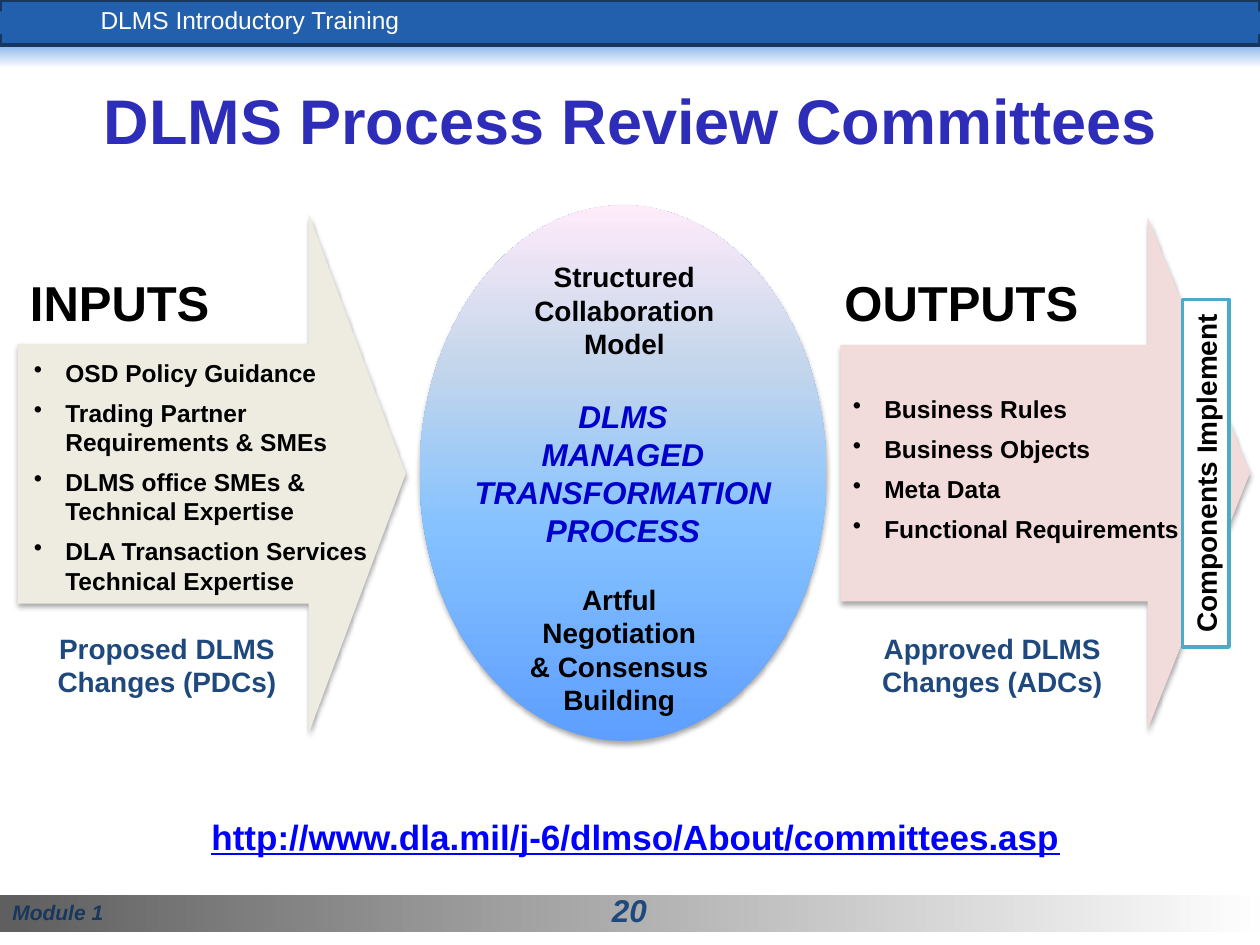
"""Build the slide on the DLMS process review committees."""
from dataclasses import dataclass

from lxml import etree
from pptx import Presentation
from pptx import util as u
from pptx.dml.color import RGBColor
from pptx.enum import shapes, text
from pptx.oxml import ns

COLUMNS, ROWS = 100, 75
WIDTH, HEIGHT = u.Inches(10), u.Inches(7.5)


@dataclass(frozen=True)
class Theme:
    """Colours, font and type sizes of the slide."""
    font: str = "Arial"
    black: str = "000000"
    white: str = "FFFFFF"
    navy: str = "17375E"
    band: str = "2260AE"
    glow: str = "8DB8EE"
    heading: str = "2D2DB9"
    label: str = "1F497D"
    process: str = "0000CC"
    link: str = "0000FF"
    sand: str = "EEECE1"
    rose: str = "F2DCDB"
    teal: str = "4BACC6"
    sky: tuple = ((0, "5E9EFF", 100), (40, "85C2FF", 100),
                  (70, "C4D6EB", 100), (100, "FFEBFA", 100))
    title: int = 36
    flow: int = 28
    url: int = 20
    strong: int = 18
    body: int = 16
    small: int = 14
    footer: int = 12


THEME = Theme()


def place(left, top, width, height):
    """Turn grid columns and rows into slide lengths."""
    across, down = WIDTH / COLUMNS, HEIGHT / ROWS
    return [round(n) for n in (left * across, top * down, width * across, height * down)]


def add(parent, tag, **attributes):
    """Append a drawing element with the given attributes."""
    return etree.SubElement(parent, ns.qn(tag), {k: str(v) for k, v in attributes.items()})


def add_color(parent, color, alpha):
    """Append a colour with an opacity in percent."""
    add(add(parent, "a:srgbClr", val=color), "a:alpha", val=alpha * 1000)


def add_shadow(effects, blur, distance, alpha):
    """Append a shadow that falls straight down."""
    shadow = add(effects, "a:outerShdw", blurRad=u.Pt(blur), dist=u.Pt(distance),
                 dir=90 * 60000, rotWithShape=0)
    add_color(shadow, THEME.black, alpha)


def fill_gradient(shape, stops, angle):
    """Fill a shape with (position, colour, opacity) stops."""
    gradient = etree.Element(ns.qn("a:gradFill"), rotWithShape="1")
    stop_list = add(gradient, "a:gsLst")
    for position, color, alpha in stops:
        add_color(add(stop_list, "a:gs", pos=position * 1000), color, alpha)
    add(gradient, "a:lin", ang=angle * 60000, scaled=0)
    shape._element.spPr.find(ns.qn("a:prstGeom")).addnext(gradient)


def add_figure(page, kind, area, fill=None, line=None, shadow=False):
    """Draw a preset shape, plain unless a line or shadow is asked for."""
    shape = page.shapes.add_shape(kind, *place(*area))
    shape.shadow.inherit = False
    if fill:
        shape.fill.solid()
        shape.fill.fore_color.rgb = RGBColor.from_string(fill)
    if line:
        shape.line.color.rgb = RGBColor.from_string(line)
        shape.line.width = u.Pt(2)
    else:
        shape.line.fill.background()
    if shadow:
        add_shadow(shape._element.spPr.find(ns.qn("a:effectLst")), 3.1, 1.8, 35)
    return shape


def write(shape, lines, size, color, align="CENTER", wrap=True, bold=True,
          italic=False, underline=False, spacing=None):
    """Fill a shape with one paragraph per line and format the runs."""
    frame = shape.text_frame
    frame.text = "\n".join(lines)
    frame.word_wrap = wrap
    for para in frame.paragraphs:
        para.alignment = getattr(text.PP_ALIGN, align)
        para.line_spacing = spacing
        for span in para.runs:
            font = span.font
            font.name, font.size = THEME.font, u.Pt(size)
            font.bold, font.italic, font.underline = bold, italic, underline
            font.color.rgb = RGBColor.from_string(color)
    return shape


def add_text(page, area, lines, size, color, **style):
    """Add a text box."""
    return write(page.shapes.add_textbox(*place(*area)), lines, size, color, **style)


def add_bullets(page, area, lines):
    """Add a bulleted list with a hanging indent."""
    box = add_text(page, area, lines, THEME.small, THEME.black, align="LEFT")
    for index, para in enumerate(box.text_frame.paragraphs):
        if index:
            para.space_before = u.Pt(6)
        properties = para._p.get_or_add_pPr()
        indent = u.Inches(0.25)
        properties.set("marL", str(indent))
        properties.set("indent", str(-indent))
        add(properties, "a:buChar", char="•")


def add_header(page):
    """Draw the top band with its glow and course name."""
    rectangle = shapes.MSO_SHAPE.RECTANGLE
    glow = add_figure(page, rectangle, (0, 3.6, COLUMNS, 1.8))
    fill_gradient(glow, ((0, THEME.glow, 100), (100, THEME.white, 100)), 90)
    add_figure(page, rectangle, (0, 0, COLUMNS, 3.6), THEME.band, THEME.navy)
    add_figure(page, rectangle, (0, 0.9, COLUMNS, 1.8), THEME.band)
    box = add_text(page, (7, 0.2, 46.3, 3.4), ["DLMS Introductory Training"], THEME.small,
                   THEME.white, align="LEFT", bold=False, spacing=0.9)
    fill = box.text_frame.paragraphs[0].runs[0]._r.rPr.find(ns.qn("a:solidFill"))
    effects = etree.Element(ns.qn("a:effectLst"))
    fill.addnext(effects)
    add_shadow(effects, 3, 2, 60)


def add_footer(page):
    """Draw the bottom band with module name and page number."""
    bar = add_figure(page, shapes.MSO_SHAPE.RECTANGLE, (0, 71.1, COLUMNS, 2.8))
    fill_gradient(bar, ((0, THEME.black, 63), (100, THEME.white, 61)), 0)
    write(bar, ["Module 1"], THEME.footer, THEME.navy, align="LEFT", italic=True, spacing=0.9)
    add_text(page, (47.5, 70.6, 4.9, 4), ["20"], THEME.strong, THEME.label,
             wrap=False, italic=True, spacing=0.9)


def add_process(page):
    """Draw the central ellipse and its three groups of words."""
    ellipse = add_figure(page, shapes.MSO_SHAPE.OVAL, (33.3, 16.3, 32.3, 42.5), shadow=True)
    fill_gradient(ellipse, THEME.sky, 270)
    write(ellipse, ["DLMS", "MANAGED", "TRANSFORMATION", "PROCESS"], THEME.strong,
          THEME.process, wrap=False, italic=True)
    add_text(page, (33.3, 20.1, 32.5, 9.1), ["Structured", "Collaboration", "Model"],
             THEME.body, THEME.black)
    add_text(page, (33.3, 45.7, 31.7, 11.8),
             ["Artful", "Negotiation", "& Consensus", "Building"], THEME.body, THEME.black)


def add_flow(page, arrow, color, name, name_area, caption, caption_left):
    """Draw a block arrow with its name above and caption below."""
    shape = add_figure(page, shapes.MSO_SHAPE.RIGHT_ARROW, arrow, color, shadow=True)
    shape.adjustments[0], shape.adjustments[1] = 0.5, 0.25
    add_text(page, name_area, [name], THEME.flow, THEME.black, wrap=False)
    add_text(page, (caption_left, 49.6, 24.1, 6.4), caption, THEME.body, THEME.label)


def main():
    """Build and save the slide."""
    deck = Presentation()
    deck.slide_width, deck.slide_height = WIDTH, HEIGHT
    page = deck.slides.add_slide(deck.slide_layouts[6])
    add_header(page)
    add_footer(page)
    title = add_text(page, (3.8, 5.6, 92.5, 7.7), ["DLMS Process Review Committees"],
                     THEME.title, THEME.heading)
    title.text_frame.vertical_anchor = text.MSO_ANCHOR.MIDDLE
    add_process(page)
    add_flow(page, (1.4, 17, 30.8, 41.2), THEME.sand, "INPUTS", (1.3, 21.1, 16.4, 5.7),
             ["Proposed DLMS", "Changes (PDCs)"], 1.2)
    add_bullets(page, (1.7, 27.9, 29.2, 20),
                ["OSD Policy Guidance", "Trading Partner Requirements & SMEs",
                 "DLMS office SMEs & Technical Expertise",
                 "DLA Transaction Services Technical Expertise"])
    add_flow(page, (66.7, 17.2, 32.5, 40.7), THEME.rose, "OUTPUTS", (65.9, 21.1, 20.8, 5.7),
             ["Approved DLMS", "Changes (ADCs)"], 66.7)
    add_bullets(page, (66.7, 30.8, 28.3, 13),
                ["Business Rules", "Business Objects", "Meta Data", "Functional Requirements"])
    banner = add_figure(page, shapes.MSO_SHAPE.RECTANGLE, (81.9, 35.7, 27.6, 3.7),
                        THEME.white, THEME.teal)
    banner.rotation = 270
    write(banner, ["Components Implement"], THEME.body, THEME.black, wrap=False)
    add_text(page, (15.6, 64.2, 69.7, 4.4),
             ["http://www.dla.mil/j-6/dlmso/About/committees.asp"], THEME.url, THEME.link,
             wrap=False, underline=True)
    deck.save("out.pptx")


if __name__ == "__main__":
    main()
